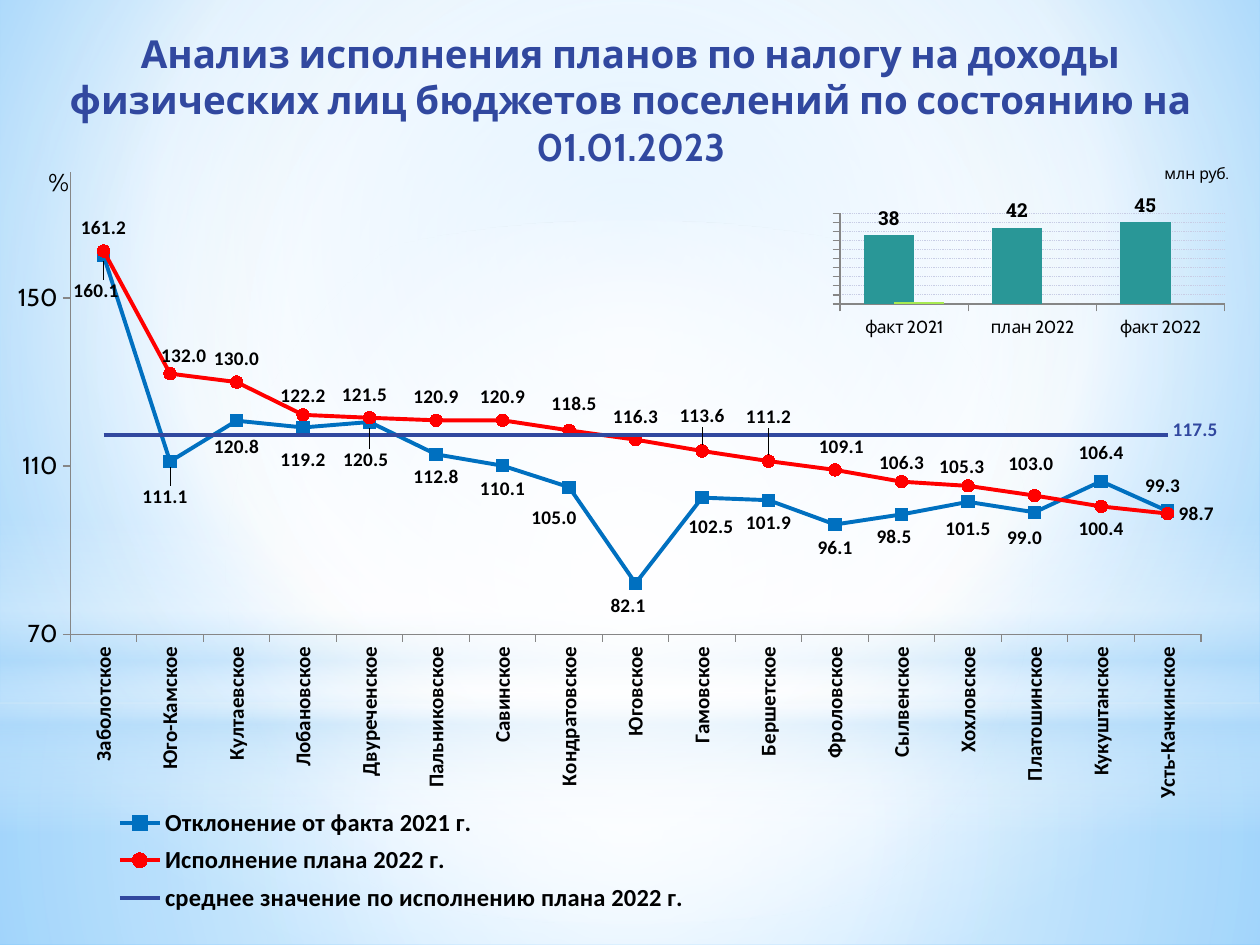
from lxml import etree
from pptx import Presentation
from pptx.chart.data import CategoryChartData
from pptx.dml.color import RGBColor
from pptx.enum.chart import XL_CHART_TYPE as CT, XL_LABEL_POSITION as POS, XL_LEGEND_POSITION as LEG
from pptx.enum.chart import XL_MARKER_STYLE as MARK, XL_TICK_LABEL_POSITION as TICK
from pptx.enum.dml import MSO_LINE
from pptx.enum.shapes import MSO_SHAPE as SHAPE
from pptx.enum.text import PP_ALIGN
from pptx.oxml.ns import qn
from pptx.util import Inches, Pt

COLORS = {"navy": "31489F", "blue": "0070C0", "red": "FF0000", "teal": "299797", "lime": "A7EA52",
          "grid": "C8CDE5", "axis": "868686", "black": "000000", "white": "FFFFFF", "sky": "B4DCFA"}
C = {name: RGBColor.from_string(code) for name, code in COLORS.items()}


def set_gradient(fill, parent, stops, focus=None):
    """Fill with (position, hex, alpha) stops: circular around focus, else from top to bottom."""
    fill.gradient()
    grad = parent.find(qn("a:gradFill"))
    for child in list(grad):
        grad.remove(child)
    gs_list = etree.SubElement(grad, qn("a:gsLst"))
    for pos, color, alpha in stops:
        gs = etree.SubElement(gs_list, qn("a:gs"), pos=str(pos * 1000))
        clr = etree.SubElement(gs, qn("a:srgbClr"), val=color)
        etree.SubElement(clr, qn("a:alpha"), val=str(alpha * 1000))
    if focus:
        circle = etree.SubElement(grad, qn("a:path"), {"path": "circle"})
        etree.SubElement(circle, qn("a:fillToRect"),
                         {side: str(v * 1000) for side, v in zip("ltrb", focus)})
    else:
        etree.SubElement(grad, qn("a:lin"), ang="5400000", scaled="0")


def set_layout(el, after=None, mode="edge", inner=False, **shares):
    """Place a chart part by shares of the chart's size."""
    for old in el.findall(qn("c:layout")):
        el.remove(old)
    lay = etree.Element(qn("c:layout"))
    manual = etree.SubElement(lay, qn("c:manualLayout"))
    if inner:
        etree.SubElement(manual, qn("c:layoutTarget"), val="inner")
    if mode == "edge":
        for tag in ("c:xMode", "c:yMode"):
            etree.SubElement(manual, qn(tag), val="edge")
    for key in ("x", "y", "w", "h"):
        if key in shares:
            etree.SubElement(manual, qn("c:" + key), val=str(round(shares[key], 4)))
    el.insert(el.index(el.find(qn(after))) + 1 if after else 0, lay)


prs = Presentation()
prs.slide_width, prs.slide_height = Inches(10), Inches(7.5)
s = prs.slides.add_slide(prs.slide_layouts[6])

# Background: base gradient under four soft light layers
bg = s.background.fill
set_gradient(bg, s.background._cSld.bg.bgPr,
             [(0, "9ED5FF", 100), (60, COLORS["white"], 100), (100, "5BB9FF", 100)], (20, 10, 20, 60))
W, B = COLORS["white"], COLORS["sky"]
CENTRE = (50, 50, 50, 50)
for kind, top, height, stops, focus in [
    (SHAPE.RECTANGLE, 5.58, 1.92, [(0, W, 91), (37, W, 76), (100, B, 79)], CENTRE),
    (SHAPE.RECTANGLE, 0, 5.58, [(0, W, 89), (48, W, 62), (100, B, 79)], CENTRE),
    (SHAPE.RECTANGLE, 4.12, 2.5, [(0, W, 0), (29, W, 30), (45, B, 40), (55, W, 26),
                                  (65, B, 60), (100, W, 0)], None),
    (SHAPE.OVAL, 1.75, 5.58, [(0, W, 100), (56, W, 0)], CENTRE),
]:
    sp = s.shapes.add_shape(kind, 0, Inches(top), prs.slide_width, Inches(height))
    sp.shadow.inherit = False
    sp.line.fill.background()
    set_gradient(sp.fill, sp._element.spPr, stops, focus)

# Title
tf = s.shapes.add_textbox(Inches(0.2), Inches(0.19), Inches(9.61), Inches(0.91)).text_frame
tf.word_wrap = True
p = tf.paragraphs[0]
p.text = "Анализ исполнения планов по налогу на доходы физических лиц бюджетов поселений по состоянию на 01.01.2023"
p.alignment = PP_ALIGN.CENTER
p.font.name, p.font.size, p.font.bold = "Cabin", Pt(22), True
p.font.color.rgb = C["navy"]

# Data of both charts
settlements = ["Заболотское", "Юго-Камское", "Култаевское", "Лобановское", "Двуреченское", "Пальниковское",
               "Савинское", "Кондратовское", "Юговское", "Гамовское", "Бершетское", "Фроловское",
               "Сылвенское", "Хохловское", "Платошинское", "Кукуштанское", "Усть-Качкинское"]
last = len(settlements) - 1
vs_2021 = [160.1, 111.1, 120.8, 119.2, 120.5, 112.8, 110.1, 105, 82.1, 102.5, 101.9, 96.1, 98.5,
           101.5, 99, 106.4, 99.3]
vs_plan = [161.2, 132, 130, 122.2, 121.5, 120.9, 120.9, 118.5, 116.3, 113.6, 111.2, 109.1, 106.3,
           105.3, 103, 100.4, 98.7]
line_data = CategoryChartData(number_format="#,##0.0")
line_data.categories = settlements
line_data.add_series("Отклонение от факта 2021 г.", vs_2021)
line_data.add_series("Исполнение плана 2022 г.", vs_plan)
line_data.add_series("среднее значение по исполнению плана 2022 г.", [117.5] * len(settlements))
bar_data = CategoryChartData(number_format="#,##0")
bar_data.categories = ["факт 2021", "план 2022", "факт 2022"]
bar_data.add_series("Series 1", [38, 42, 45])
bar_data.add_series("Series 2", [1, None, None])

# Charts with their shared axis set-up
LINE_W, LINE_H = 9.97, 6.77
charts = []
for kind, data, box, plot, scale, unit, unit_size, unit_at, cat_size in [
    (CT.LINE_MARKERS, line_data, (0, 0.6, LINE_W, LINE_H), (0.056, 0.113, 0.9, 0.542),
     (70, 180, 40), "%", 14, (0.035, 0.1), 12),
    (CT.COLUMN_CLUSTERED, bar_data, (6.57, 1.15, 3.23, 1.81), (0.03, 0.301, 0.945, 0.397),
     (0, 50, 5), "млн руб.", 9, (0.82, 0.06), 10),
]:
    chart = s.shapes.add_chart(kind, *map(Inches, box), data).chart
    chart.has_title = chart.has_legend = False
    chart.font.name, chart.font.size = "Cabin", Pt(14)
    chart.font.color.rgb = C["black"]
    set_layout(chart._chartSpace.chart.plotArea, inner=True, **dict(zip("xywh", plot)))
    val, cat = chart.value_axis, chart.category_axis
    val.minimum_scale, val.maximum_scale, val.major_unit = scale
    val.has_major_gridlines = False
    val.tick_labels.number_format, val.tick_labels.number_format_is_linked = "#,##0", False
    val.axis_title.text_frame.text = unit
    font = val.axis_title.text_frame.paragraphs[0].font
    font.name, font.size, font.bold = "Cabin", Pt(unit_size), False
    title = val.axis_title._element
    title.find(".//" + qn("a:bodyPr")).set("rot", "0")
    set_layout(title, "c:tx", x=unit_at[0], y=unit_at[1])
    cat.tick_labels.font.size = Pt(cat_size)
    for axis in (val, cat):
        axis.format.line.color.rgb = C["axis"]
    charts.append(chart)
line_chart, bar_chart = charts

# Line chart
cat = line_chart.category_axis
cat.tick_labels.font.name, cat.tick_labels.font.bold = "Calibri", True
cat._element.find(qn("c:txPr")).find(qn("a:bodyPr")).set("rot", "-5400000")
line_chart.has_legend = True
legend = line_chart.legend
legend.position, legend.include_in_layout = LEG.BOTTOM, False
legend.font.name, legend.font.size, legend.font.bold = "Calibri", Pt(14), True
set_layout(legend._element, "c:legendPos", x=0.07, y=0.85, w=0.5, h=0.14)

# Label sides that differ from the series' own, and label shifts in inches
deviation, plan, average = line_chart.plots[0].series
for series, color, marker, points, side, sides, shifts in [
    (deviation, "blue", MARK.SQUARE, range(last + 1), POS.BELOW, {15: POS.ABOVE, 16: POS.ABOVE},
     {0: (-0.06, 0.1), 1: (-0.04, 0.1), 2: (0, 0.03), 3: (0, 0.08), 4: (-0.03, 0.12), 7: (-0.12, 0.06),
      8: (-0.06, 0), 9: (0.07, 0.05), 12: (-0.06, 0), 13: (0, 0.03), 14: (-0.08, 0.02),
      15: (0, -0.04), 16: (-0.04, -0.02)}),
    (plan, "red", MARK.CIRCLE, range(last + 1), POS.ABOVE, {15: POS.BELOW, 16: POS.RIGHT},
     {1: (0.11, 0.04), 3: (0, 0.03), 4: (-0.04, 0), 7: (0.04, -0.03), 9: (0, -0.1), 10: (0, -0.17),
      11: (0.05, 0), 12: (0, 0.03), 13: (-0.05, 0.03), 14: (-0.03, -0.07)}),
    (average, "navy", MARK.NONE, [last], POS.RIGHT, {}, {last: (0, -0.04)}),
]:
    series.smooth = False
    series.format.line.color.rgb, series.format.line.width = C[color], Pt(2.25)
    series.marker.style = marker
    if marker != MARK.NONE:
        series.marker.size = 7
        series.marker.format.fill.solid()
        series.marker.format.fill.fore_color.rgb = C[color]
        series.marker.format.line.color.rgb = C[color]
    for i in points:
        label = series.points[i].data_label
        label.font.name, label.font.size, label.font.bold = "Calibri", Pt(11), True
        label.font.color.rgb = C["navy" if series is average else "black"]
        label.position = sides.get(i, side)
        if i in shifts:
            dx, dy = shifts[i]
            set_layout(label._get_or_add_dLbl(), "c:idx", "factor", x=dx / LINE_W, y=dy / LINE_H)

# Column chart
val = bar_chart.value_axis
val.tick_label_position = TICK.NONE
val.has_major_gridlines = True
grid = val.major_gridlines.format.line
grid.color.rgb, grid.width, grid.dash_style = C["grid"], Pt(0.5), MSO_LINE.ROUND_DOT
plot = bar_chart.plots[0]
plot.gap_width, plot.overlap, plot.vary_by_categories = 94, 40, False
for series, color in zip(plot.series, ("teal", "lime")):
    series.format.fill.solid()
    series.format.fill.fore_color.rgb = C[color]
labels = plot.series[0].data_labels
labels.show_value, labels.position = True, POS.OUTSIDE_END
labels.font.name, labels.font.size, labels.font.bold = "Roboto Slab", Pt(11), True
labels.font.color.rgb = C["black"]

prs.save("out.pptx")
